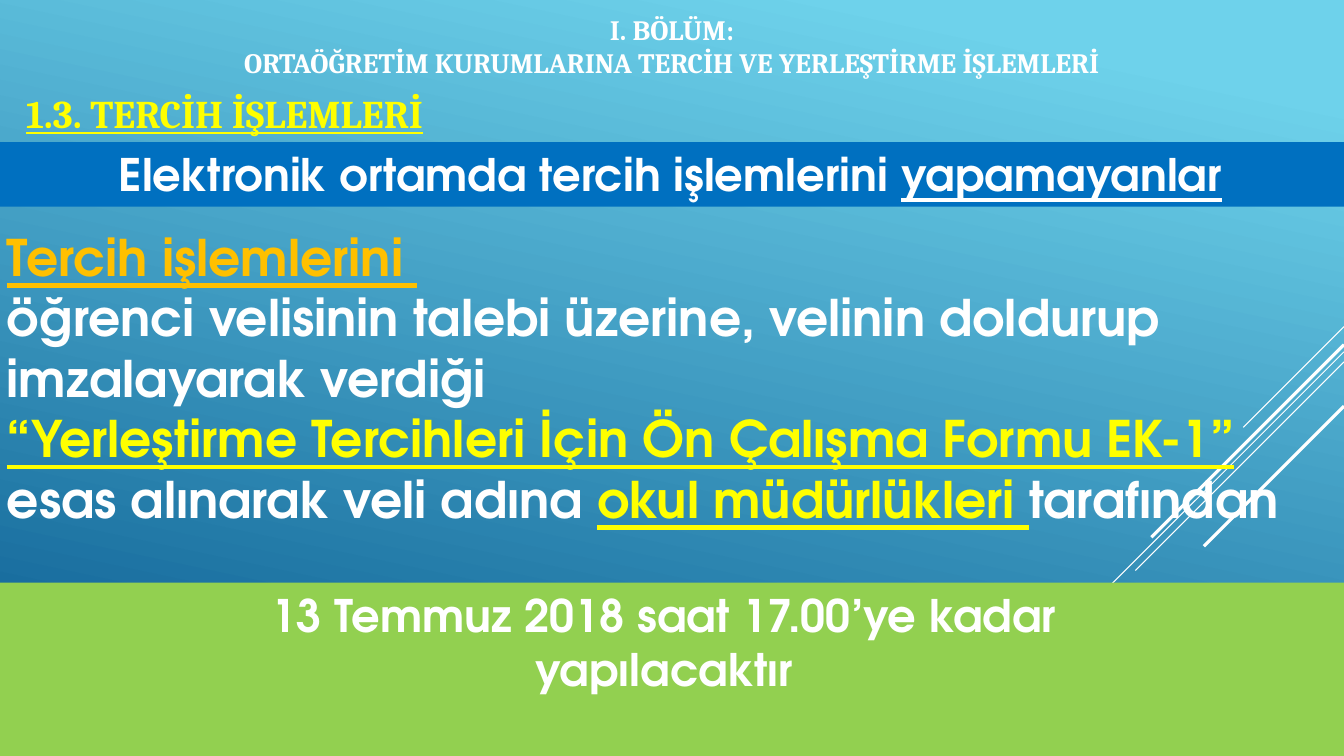
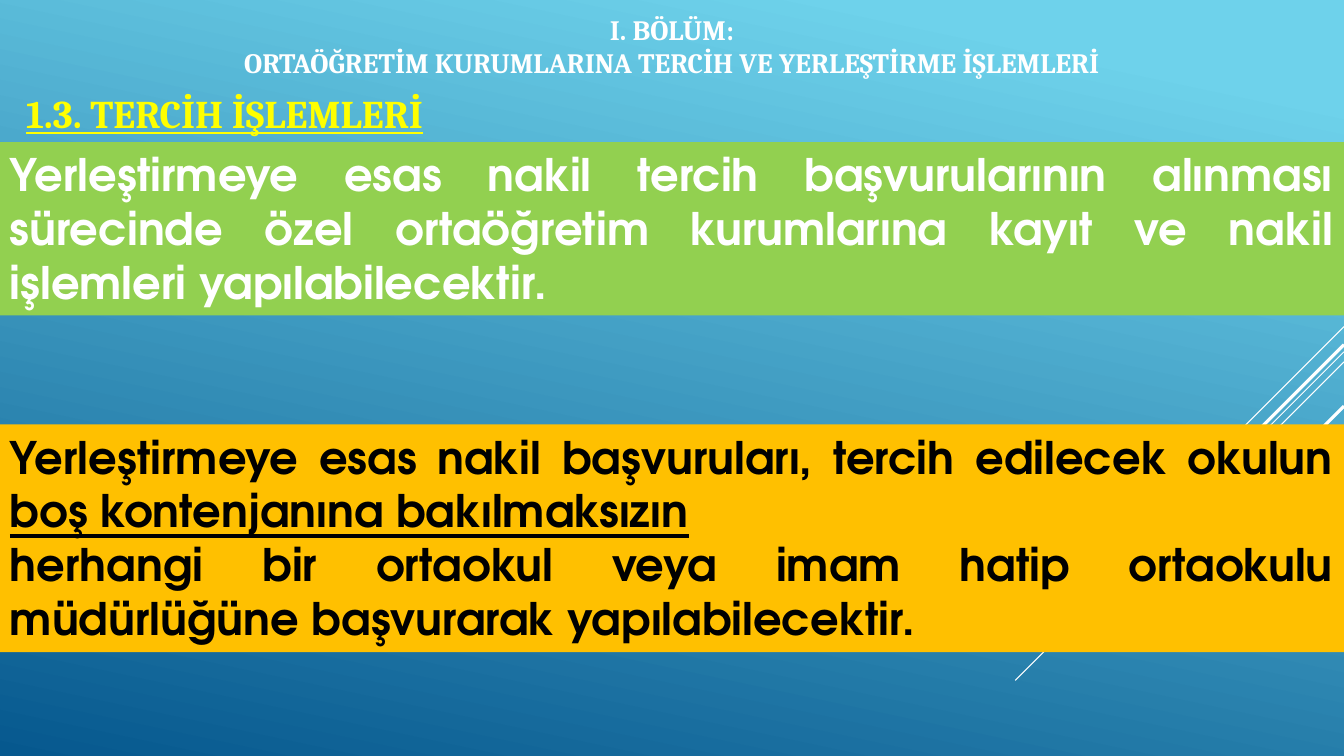
"""Build two slides on secondary school preference procedures."""
from lxml.etree import SubElement
from pptx import Presentation
from pptx.dml.color import RGBColor
from pptx.enum.shapes import MSO_CONNECTOR as Connector, MSO_SHAPE as Shape
from pptx.enum.text import MSO_ANCHOR as Anchor, PP_ALIGN as Align
from pptx.oxml.ns import qn
from pptx.util import Inches, Pt

WHITE = RGBColor(0xFF, 0xFF, 0xFF)
BLACK = RGBColor(0x00, 0x00, 0x00)
YELLOW = RGBColor(0xFF, 0xFF, 0x00)
ORANGE = RGBColor(0xFF, 0xC0, 0x00)
GREEN = RGBColor(0x92, 0xD0, 0x50)
BLUE = RGBColor(0x00, 0x70, 0xC0)
SKY = RGBColor(0x6E, 0xD2, 0xEB)
DEEP_BLUE = RGBColor(0x06, 0x58, 0x8E)

HEADING_FONT = "Cambria"
BODY_FONT = "TeX Gyre Adventor"
WIDTH = 13.33
BLEED = 0.03

DIAGONALS = [
    (3.24, 1.00, 0.75),
    (3.49, 3.26, 0.75),
    (3.59, 2.07, 0.75),
    (3.42, 1.91, 2.25),
    (4.03, 1.39, 2.25),
]


def set_background(deck):
    fill = deck.slide_master.background.fill
    fill.gradient()
    fill.gradient_angle = 258
    for stop, position, color in zip(fill.gradient_stops, (0.1, 1), (SKY, DEEP_BLUE)):
        stop.position = position
        stop.color.rgb = color


def add_diagonal(page, top, reach, weight):
    line = page.shapes.add_connector(
        Connector.STRAIGHT, Inches(WIDTH), Inches(top),
        Inches(WIDTH - reach), Inches(top + reach))
    line.line.color.rgb = WHITE
    line.line.width = Pt(weight)
    SubElement(line.element.spPr, qn("a:effectLst"))


def write(shape, paragraphs, font, size, color, wrap=True):
    """Fill a shape with (alignment, [(text, underlined, colour or None)]) paragraphs."""
    frame = shape.text_frame
    frame.word_wrap = wrap
    frame.vertical_anchor = Anchor.TOP
    for index, (alignment, spans) in enumerate(paragraphs):
        para = frame.paragraphs[0] if index == 0 else frame.add_paragraph()
        para.alignment = alignment
        para.font.name = font
        para.font.size = Pt(size)
        para.font.bold = True
        for text, underlined, span_color in spans:
            span = para.add_run()
            span.text = text
            span.font.underline = underlined
            span.font.color.rgb = span_color or color


def add_text(page, left, top, width, height, paragraphs, font, size, color, wrap=True):
    box = page.shapes.add_textbox(
        Inches(left), Inches(top), Inches(width), Inches(height))
    write(box, paragraphs, font, size, color, wrap)


def add_band(page, top, height, fill, paragraphs, color=WHITE, bleed=0):
    band = page.shapes.add_shape(
        Shape.RECTANGLE, Inches(-bleed), Inches(top),
        Inches(WIDTH + bleed), Inches(height))
    band.shadow.inherit = False
    band.fill.solid()
    band.fill.fore_color.rgb = fill
    band.line.fill.background()
    write(band, paragraphs, BODY_FONT, 32, color)


def add_page(deck):
    page = deck.slides.add_slide(deck.slide_layouts[6])
    for diagonal in DIAGONALS:
        add_diagonal(page, *diagonal)
    add_text(page, 0, 0.07, WIDTH, 0.77, [
        (Align.CENTER, [("I. BÖLÜM:", False, None)]),
        (Align.CENTER, [("ORTAÖĞRETİM KURUMLARINA TERCİH VE YERLEŞTİRME İŞLEMLERİ", False, None)]),
    ], HEADING_FONT, 20, WHITE)
    add_text(page, 0.16, 0.84, 4.63, 0.57, [
        (Align.LEFT, [("1.3. TERCİH İŞLEMLERİ", True, None)]),
    ], HEADING_FONT, 28, YELLOW, wrap=False)
    return page


def build_offline_preferences(deck):
    page = add_page(deck)
    add_text(page, -BLEED, 2.19, WIDTH + BLEED, 3.13, [
        (Align.LEFT, [("Tercih işlemlerini ", True, ORANGE)]),
        (Align.LEFT, [("öğrenci velisinin talebi üzerine, velinin doldurup imzalayarak verdiği", False, None)]),
        (Align.LEFT, [("“Yerleştirme Tercihleri İçin Ön Çalışma Formu EK-1”", True, YELLOW)]),
        (Align.JUSTIFY, [("esas alınarak veli adına ", False, None),
                         ("okul müdürlükleri ", True, YELLOW),
                         ("tarafından", False, None)]),
    ], BODY_FONT, 36, WHITE)
    add_band(page, 1.41, 0.64, BLUE, [
        (Align.CENTER, [("Elektronik ortamda tercih işlemlerini ", False, None),
                        ("yapamayanlar", True, None)]),
    ], bleed=BLEED)
    add_band(page, 5.78, 1.72, GREEN, [
        (Align.CENTER, [("13 Temmuz 2018 saat 17.00’ye kadar ", False, None)]),
        (Align.CENTER, [("yapılacaktır ", False, None)]),
    ], bleed=BLEED)


def build_transfer_preferences(deck):
    page = add_page(deck)
    add_band(page, 1.41, 1.72, GREEN, [
        (Align.JUSTIFY, [("Yerleştirmeye esas nakil tercih başvurularının alınması sürecinde özel "
                          "ortaöğretim kurumlarına kayıt ve nakil işlemleri yapılabilecektir.", False, None)]),
    ])
    add_band(page, 4.21, 2.26, ORANGE, [
        (Align.JUSTIFY, [("Yerleştirmeye esas nakil başvuruları, tercih edilecek okulun ", False, None),
                         ("boş kontenjanına bakılmaksızın", True, None)]),
        (Align.JUSTIFY, [("herhangi bir ortaokul veya imam hatip ortaokulu müdürlüğüne "
                          "başvurarak yapılabilecektir.", False, None)]),
    ], color=BLACK)


def main():
    deck = Presentation()
    deck.slide_width = Inches(WIDTH)
    deck.slide_height = Inches(7.5)
    set_background(deck)
    build_offline_preferences(deck)
    build_transfer_preferences(deck)
    deck.save("out.pptx")


if __name__ == "__main__":
    main()
